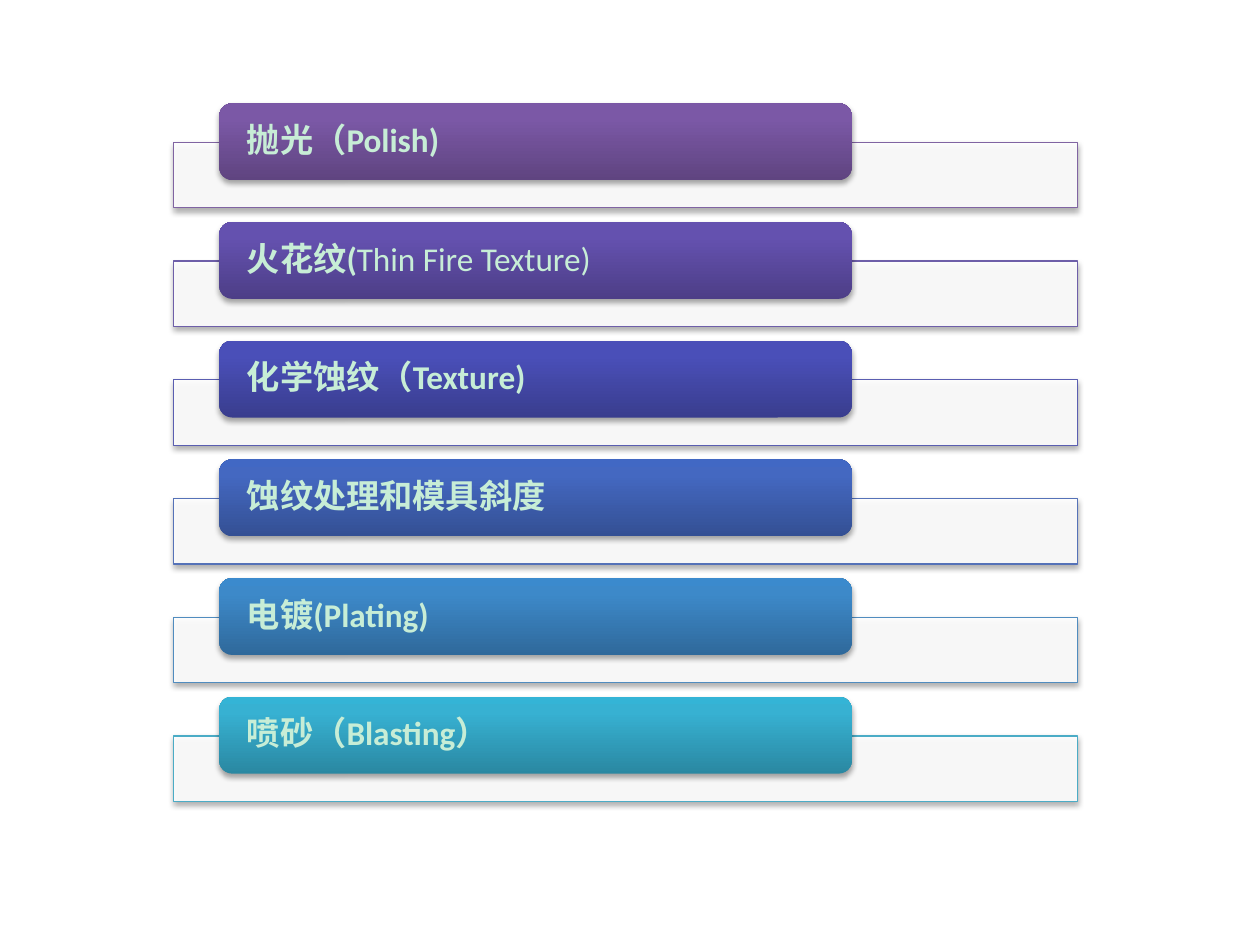
"""Build a slide listing six mould surface treatments as stacked labelled bars."""
from lxml import etree
from pptx import Presentation
from pptx.dml.color import RGBColor
from pptx.enum.shapes import MSO_SHAPE
from pptx.enum.text import MSO_ANCHOR, PP_ALIGN
from pptx.oxml.ns import qn
from pptx.util import Inches, Pt

RECT, ROUND = MSO_SHAPE.RECTANGLE, MSO_SHAPE.ROUNDED_RECTANGLE
MIDDLE, LEFT = MSO_ANCHOR.MIDDLE, PP_ALIGN.LEFT

COLORS = {"background": "FFFFFF", "bar": "FFFFFF", "text": "C7EDD6", "shadow": "000000"}
STOPS = (0, 80, 100)

TREATMENTS = [
    ([("抛光（Polish)", True)], "8064A2", ("5F4480", "7B58A6", "7C57A8")),
    ([("火花纹(", True), ("Thin Fire Texture)", False)], "6E5FA9", ("4D3E87", "6451AF", "6450B2")),
    ([("化学蚀纹（Texture)", True)], "5A5EB1", ("393D8E", "4A4FB8", "484EBB")),
    ([("蚀纹处理和模具斜度", True)], "5572B8", ("345094", "4468C1", "4168C4")),
    ([("电镀(Plating)", True)], "508CBF", ("2F699B", "3D89C9", "3B8ACD")),
    ([("喷砂（Blasting）", True)], "4BACC6", ("2A88A2", "37B1D2", "34B4D6")),
]

BAR_LEFT, BAR_TOP, BAR_W, BAR_H = 1.38, 1.13, 7.17, 0.52
LABEL_LEFT, LABEL_TOP, LABEL_W, LABEL_H = 1.74, 0.82, 5.02, 0.61
PITCH = (5.53 - LABEL_TOP) / (len(TREATMENTS) - 1)


def add_color(parent, color, alpha=None):
    clr = etree.SubElement(parent, qn("a:srgbClr"), val=color)
    if alpha is not None:
        etree.SubElement(clr, qn("a:alpha"), val=str(alpha * 1000))


def add_shadow(s):
    s.shadow.inherit = False
    effects = s._element.spPr.find(qn("a:effectLst"))
    shadow = etree.SubElement(effects, qn("a:outerShdw"), blurRad=str(Pt(3.15)),
                              dist=str(Pt(1.8)), dir="5400000", rotWithShape="0")
    add_color(shadow, COLORS["shadow"], 35)


def add_bar(slide, top, color):
    s = slide.shapes.add_shape(RECT, Inches(BAR_LEFT), Inches(top), Inches(BAR_W), Inches(BAR_H))
    s.fill.solid()
    s.fill.fore_color.rgb = RGBColor.from_string(COLORS["bar"])
    clr = s._element.spPr.find(qn("a:solidFill")).find(qn("a:srgbClr"))
    etree.SubElement(clr, qn("a:alpha"), val="90000")
    s.line.color.rgb = RGBColor.from_string(color)
    s.line.width = Pt(0.75)
    add_shadow(s)


def add_label(slide, top, runs, gradient):
    s = slide.shapes.add_shape(ROUND, Inches(LABEL_LEFT), Inches(top),
                               Inches(LABEL_W), Inches(LABEL_H))
    s.fill.gradient()
    s.fill.gradient_angle = 90
    stops = s._element.spPr.find(qn("a:gradFill")).find(qn("a:gsLst"))
    stops.clear()
    for pos, color in zip(STOPS, gradient):
        add_color(etree.SubElement(stops, qn("a:gs"), pos=str(pos * 1000)), color)
    s.line.fill.background()
    add_shadow(s)
    tf = s.text_frame
    tf.word_wrap = True
    tf.vertical_anchor = MIDDLE
    tf.margin_left = tf.margin_right = Inches(0.19)
    tf.margin_top = tf.margin_bottom = 0
    p = tf.paragraphs[0]
    p.alignment = LEFT
    p.line_spacing = 0.9
    for text, bold in runs:
        r = p.add_run()
        r.text = text
        r.font.name = "Calibri"
        r.font.size = Pt(19)
        r.font.bold = bold
        r.font.color.rgb = RGBColor.from_string(COLORS["text"])


def main():
    prs = Presentation()
    prs.slide_width, prs.slide_height = Inches(10), Inches(7.5)
    slide = prs.slides.add_slide(prs.slide_layouts[6])
    slide.background.fill.solid()
    slide.background.fill.fore_color.rgb = RGBColor.from_string(COLORS["background"])
    for i, (runs, outline, gradient) in enumerate(TREATMENTS):
        add_bar(slide, BAR_TOP + i * PITCH, outline)
        add_label(slide, LABEL_TOP + i * PITCH, runs, gradient)
    prs.save("out.pptx")


if __name__ == "__main__":
    main()
